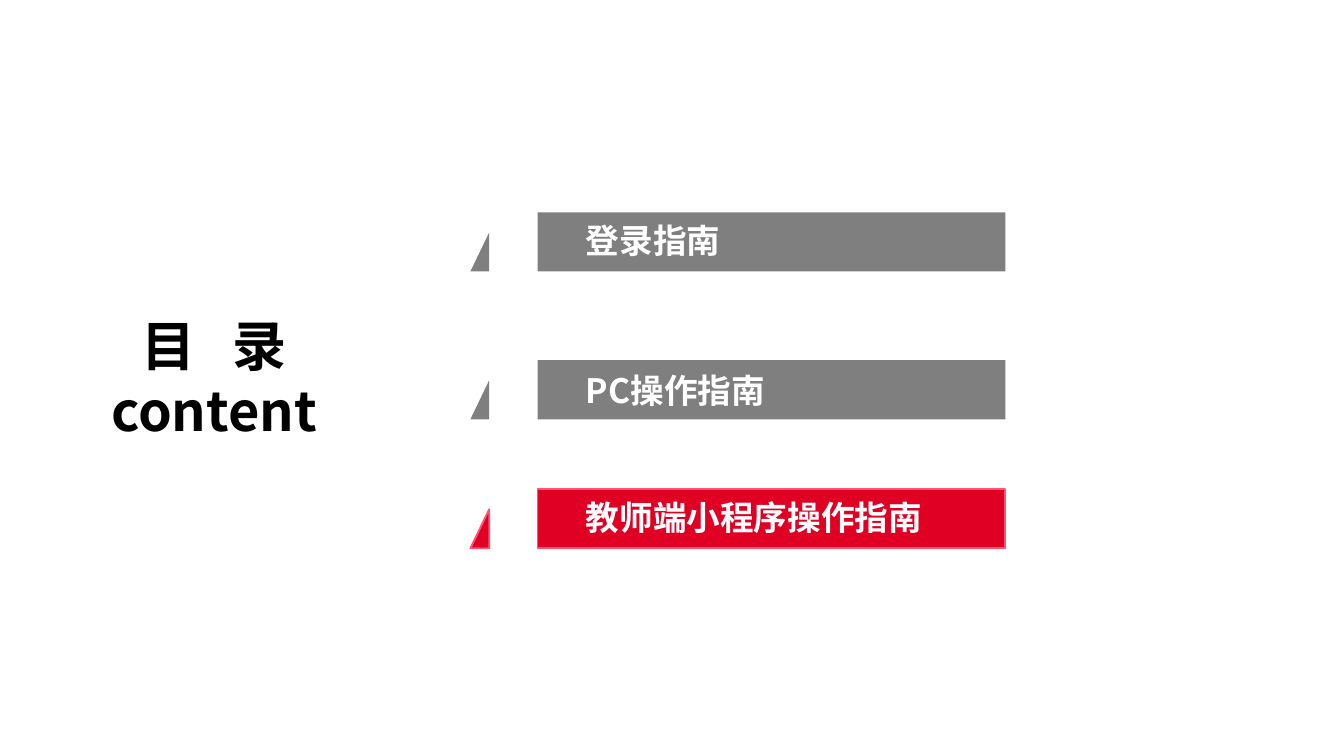
import pptx
import pptx.util
import pptx.dml.color
import pptx.enum.text
import pptx.oxml.ns
from lxml import etree

FONT = "Noto Sans CJK SC"
WIDTH = 10
HEIGHT = WIDTH * 9 / 16
BAR_LEFT, BAR_WIDTH, BAR_HEIGHT = 3.5, 3.98, 0.44
WEDGE = [(0.14, 0.15), (0.14, 0.44), (0, 0.44)]
BAND = [(0.5, 0), (BAR_WIDTH, 0), (BAR_WIDTH, BAR_HEIGHT), (0.5, BAR_HEIGHT)]
GREY, RED, PINK = "7F7F7F", "DF0024", "FF536F"
ITEMS = [
    ("登录指南", 1.58, 0.03, GREY, None),
    ("PC操作指南", 2.68, 0, GREY, None),
    ("教师端小程序操作指南", 3.64, 0.03, RED, PINK),
]


def rgb(value):
    return pptx.dml.color.RGBColor.from_string(value)


def format_frame(tf, left=0, bottom=0):
    tf.margin_left = pptx.util.Inches(left)
    tf.margin_bottom = pptx.util.Inches(bottom)
    tf.margin_right = tf.margin_top = 0
    tf.vertical_anchor = pptx.enum.text.MSO_ANCHOR.MIDDLE
    tf.auto_size = pptx.enum.text.MSO_AUTO_SIZE.NONE
    tf.word_wrap = True


def format_paragraph(p, size, color, align):
    p.alignment = align
    p.font.size = pptx.util.Pt(size)
    p.font.bold = True
    p.font.color.rgb = rgb(color)
    p.font.name = FONT
    props = p._p.get_or_add_pPr().get_or_add_defRPr()
    etree.SubElement(props, pptx.oxml.ns.qn("a:ea"), typeface=FONT)


def add_title(s):
    title = s.shapes.title
    title.left, title.top = pptx.util.Inches(0.58), pptx.util.Inches(2.28)
    title.width, title.height = pptx.util.Inches(2.03), pptx.util.Inches(1.06)
    tf = title.text_frame
    format_frame(tf)
    heading = tf.paragraphs[0]
    for text in ("目", " ", "录"):
        r = heading.add_run()
        r.text = text
        if text == " ":
            r._r.get_or_add_rPr().set("spc", "1300")
    tf.add_paragraph().text = "content"
    for p in tf.paragraphs:
        format_paragraph(p, 29, "000000", pptx.enum.text.PP_ALIGN.CENTER)


def add_item(s, text, top, lift, fill, line):
    def place(points):
        return [(pptx.util.Inches(BAR_LEFT + x), pptx.util.Inches(top + y)) for x, y in points]

    wedge, band = place(WEDGE), place(BAND)
    builder = s.shapes.build_freeform(*wedge[0])
    builder.add_line_segments(wedge[1:], close=True)
    builder.move_to(*band[0])
    builder.add_line_segments(band[1:], close=True)
    sp = builder.convert_to_shape()
    sp.shadow.inherit = False
    sp.fill.solid()
    sp.fill.fore_color.rgb = rgb(fill)
    if line:
        sp.line.color.rgb = rgb(line)
        sp.line.width = pptx.util.Pt(1)
    else:
        sp.line.fill.background()
    format_frame(sp.text_frame, left=0.86, bottom=lift)
    p = sp.text_frame.paragraphs[0]
    p.text = text
    format_paragraph(p, 18, "FFFFFF", pptx.enum.text.PP_ALIGN.LEFT)


def main():
    prs = pptx.Presentation()
    prs.slide_width = pptx.util.Inches(WIDTH)
    prs.slide_height = pptx.util.Inches(HEIGHT)
    s = prs.slides.add_slide(prs.slide_layouts[5])
    add_title(s)
    for item in ITEMS:
        add_item(s, *item)
    prs.save("out.pptx")


if __name__ == "__main__":
    main()
